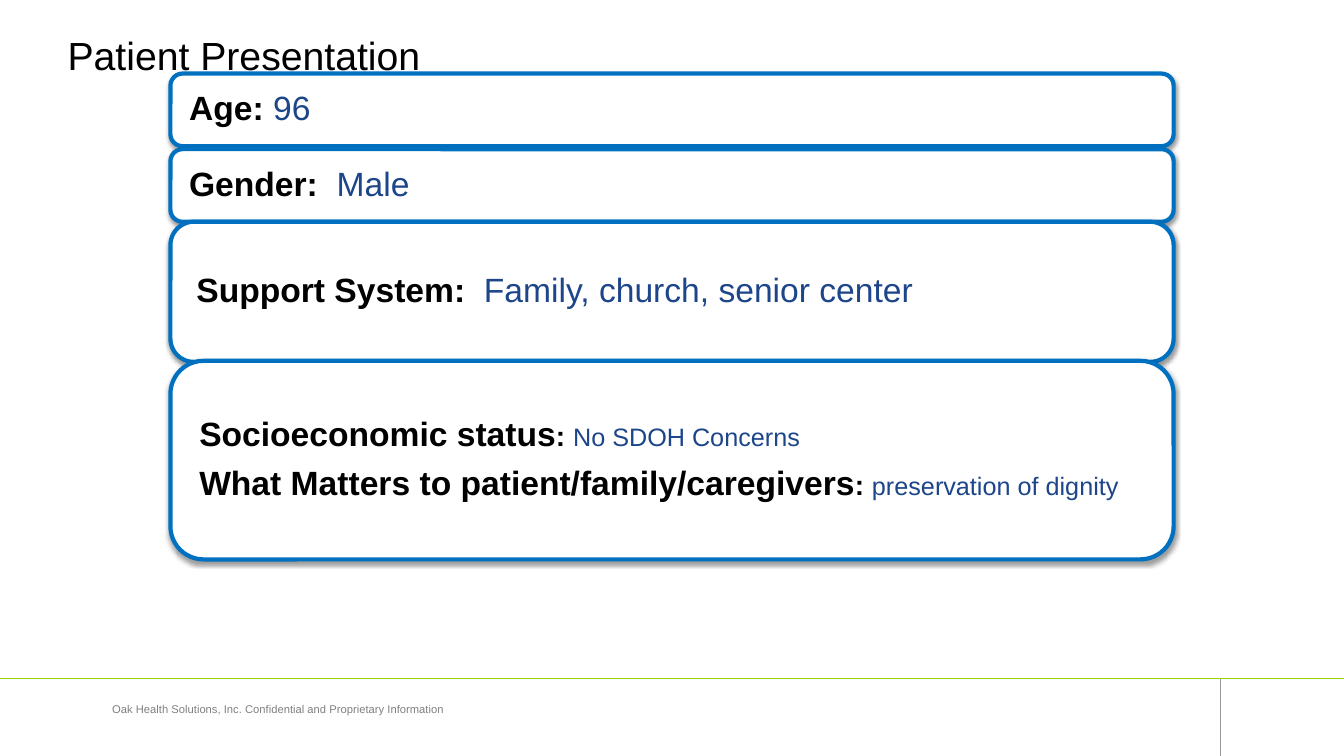
from lxml import etree
from pptx import Presentation
from pptx.dml.color import RGBColor
from pptx.enum.shapes import MSO_CONNECTOR, MSO_SHAPE
from pptx.enum.text import MSO_ANCHOR, PP_ALIGN
from pptx.oxml.ns import qn
from pptx.util import Inches, Pt

LINE = MSO_CONNECTOR.STRAIGHT
ROUNDED = MSO_SHAPE.ROUNDED_RECTANGLE
MIDDLE = MSO_ANCHOR.MIDDLE
LEFT, CENTER = PP_ALIGN.LEFT, PP_ALIGN.CENTER

COLORS = {"label": "000000", "answer": "1C458A", "border": "0070C0", "card": "FFFFFF",
          "rule": "95D600", "divider": "999999", "footer": "808080", "shadow": "000000"}


def style_run(run, size, color, bold=False):
    run.font.name = "Arial"
    run.font.size = Pt(size)
    run.font.bold = bold
    run.font.color.rgb = RGBColor.from_string(COLORS[color])


def set_insets(frame, inset):
    frame.margin_left = frame.margin_right = Inches(inset)
    frame.margin_top = frame.margin_bottom = Inches(inset)


prs = Presentation()
prs.slide_width, prs.slide_height = Inches(13.33), Inches(7.5)
slide = prs.slides.add_slide(prs.slide_layouts[5])

# Footer rules
for x1, y1, x2, y2, color in [(12.1, 7.5, 12.1, 6.73, "divider"),
                              (0, 6.73, 13.33, 6.73, "rule")]:
    rule = slide.shapes.add_connector(LINE, Inches(x1), Inches(y1), Inches(x2), Inches(y2))
    rule.line.color.rgb = RGBColor.from_string(COLORS[color])
    rule.line.width = Pt(0.5)
    etree.SubElement(rule._element.spPr, qn("a:effectLst"))

# Footer notice
notice = slide.shapes.add_textbox(Inches(0.42), Inches(6.92), Inches(4.68), Inches(0.42))
notice.text_frame.word_wrap = True
notice_line = notice.text_frame.paragraphs[0]
notice_line.text = "Oak Health Solutions, Inc. Confidential and Proprietary Information"
notice_line.alignment = CENTER
style_run(notice_line.runs[0], 8, "footer")

# Title
title = slide.shapes.title
title.left, title.top = Inches(0.67), Inches(0.28)
title.width, title.height = Inches(9.5), Inches(0.52)
title_frame = title.text_frame
title_frame.text = "Patient Presentation"
title_frame.vertical_anchor = MIDDLE
set_insets(title_frame, 0)
title_frame.paragraphs[0].alignment = LEFT
style_run(title_frame.paragraphs[0].runs[0], 28, "label")

# Patient facts: top, height, inset, lines of (text, size, color, bold)
facts = [
    (0.73, 0.72, 0.15, [[("Age: ", 24, "label", True), ("96", 24, "answer", False)]]),
    (1.48, 0.72, 0.15, [[("Gender:  ", 24, "label", True), ("Male", 24, "answer", False)]]),
    (2.2, 1.39, 0.19, [[("Support System: ", 24, "label", True),
                        (" Family, church, senior center", 24, "answer", False)]]),
    (3.58, 1.97, 0.19, [
        [("Socioeconomic status", 24, "label", True), (": ", 20, "label", True),
         ("No SDOH Concerns", 18, "answer", False)],
        [("What Matters to patient/family/caregivers", 24, "label", True),
         (": ", 20, "label", True), ("preservation of dignity", 18, "answer", False)]]),
]
for top, height, inset, lines in facts:
    card = slide.shapes.add_shape(ROUNDED, Inches(1.69), Inches(top), Inches(9.95), Inches(height))
    card.fill.solid()
    card.fill.fore_color.rgb = RGBColor.from_string(COLORS["card"])
    card.line.color.rgb = RGBColor.from_string(COLORS["border"])
    card.line.width = Pt(3)

    # Soft shadow straight below the card
    card.shadow.inherit = False
    effects = card._element.spPr.find(qn("a:effectLst"))
    shadow = etree.SubElement(effects, qn("a:outerShdw"), blurRad=str(Pt(3.1)),
                              dist=str(Pt(1.6)), dir="5400000", rotWithShape="0")
    shade = etree.SubElement(shadow, qn("a:srgbClr"), val=COLORS["shadow"])
    etree.SubElement(shade, qn("a:alpha"), val="38000")

    # Label and answer lines
    frame = card.text_frame
    frame.word_wrap = True
    frame.vertical_anchor = MIDDLE
    set_insets(frame, inset)
    for index, pieces in enumerate(lines):
        line = frame.add_paragraph() if index else frame.paragraphs[0]
        line.alignment = LEFT
        line.line_spacing = 0.9
        if index < len(lines) - 1:
            line.space_after = Pt(9.5)
        for text, size, color, bold in pieces:
            run = line.add_run()
            run.text = text
            style_run(run, size, color, bold)

prs.save("out.pptx")
